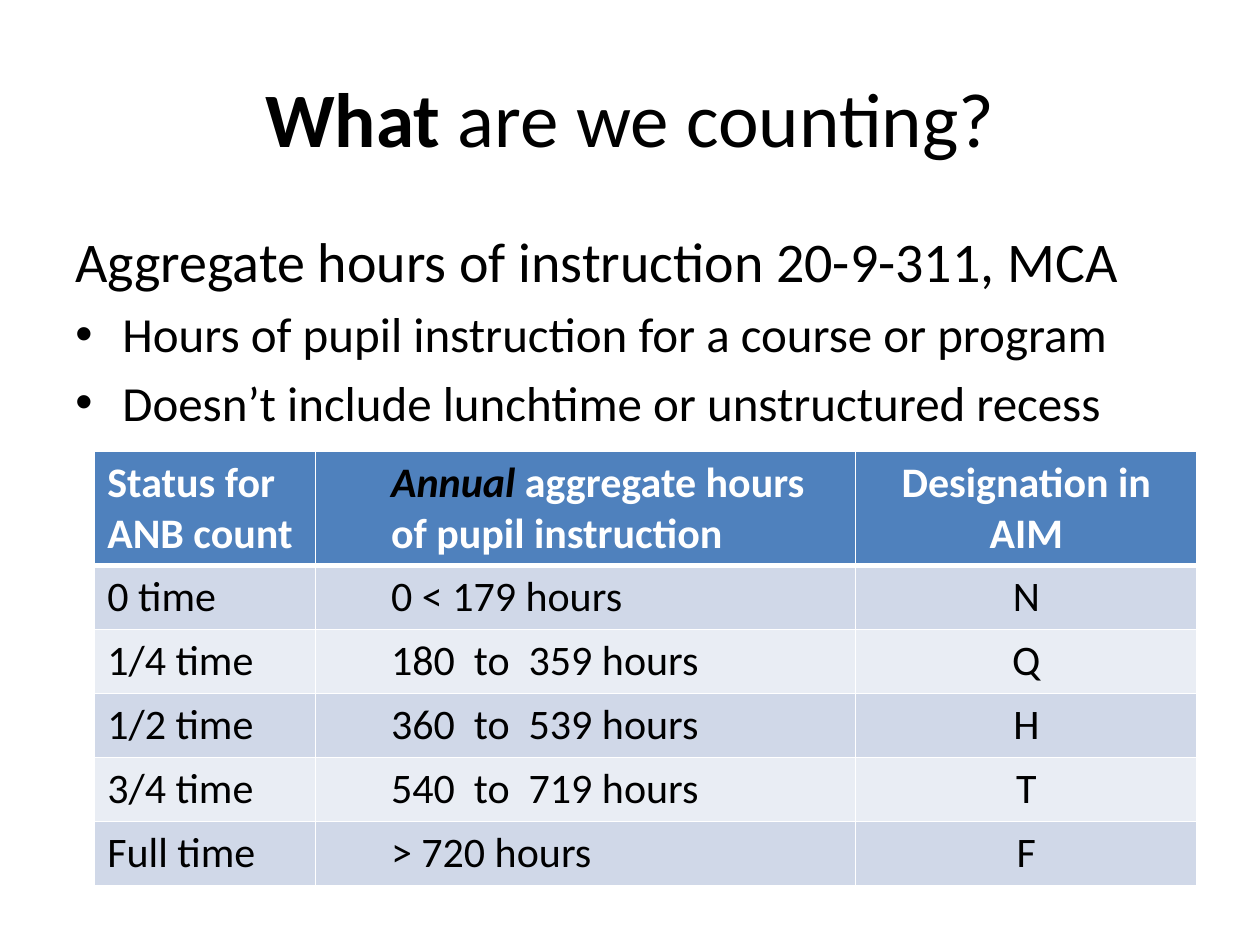
from lxml import etree
from pptx import Presentation
from pptx import util as u
from pptx.dml.color import RGBColor
from pptx.enum import text
from pptx.oxml.ns import qn

BLACK = RGBColor(0x00, 0x00, 0x00)
WHITE = RGBColor(0xFF, 0xFF, 0xFF)
HEADER = RGBColor(0x4F, 0x81, 0xBD)
BANDS = (RGBColor(0xD0, 0xD8, 0xE8), RGBColor(0xE9, 0xED, 0xF4))
FONT = "Calibri"

HEADINGS = ("Status for ANB count",
            "Annual aggregate hours of pupil instruction",
            "Designation in AIM")
STATUSES = (("0 time", "0 < 179 hours", "N"),
            ("1/4 time", "180  to  359 hours", "Q"),
            ("1/2 time", "360  to  539 hours", "H"),
            ("3/4 time", "540  to  719 hours", "T"),
            ("Full time", "> 720 hours", "F"))
COLUMN_WIDTHS = (4.45, 10.89, 6.88)
HEADER_HEIGHT = 2.3


def format_run(r, size, color=BLACK, bold=False, italic=False):
    f = r.font
    f.name, f.size, f.bold, f.italic = FONT, u.Pt(size), bold, italic
    f.color.rgb = color


def place(sp, left, top, width, height):
    sp.left, sp.top, sp.width, sp.height = map(u.Cm, (left, top, width, height))


def add_title(s, *box):
    sp = s.shapes.title
    place(sp, *box)
    tf = sp.text_frame
    tf.vertical_anchor = text.MSO_ANCHOR.MIDDLE
    p = tf.paragraphs[0]
    p.alignment = text.PP_ALIGN.CENTER
    for words, bold in (("What", True), (" are we counting?", False)):
        r = p.add_run()
        r.text = words
        format_run(r, 44, bold=bold)


def add_bullet(p, indent):
    pPr = p._p.get_or_add_pPr()
    pPr.set("marL", str(u.Cm(indent)))
    pPr.set("indent", str(-u.Cm(indent)))
    etree.SubElement(pPr, qn("a:buFont")).set("typeface", "Arial")
    etree.SubElement(pPr, qn("a:buChar")).set("char", "•")


def add_body(s, *box):
    tf = s.shapes.add_textbox(*map(u.Cm, box)).text_frame
    tf.word_wrap = True
    tf.text = ("Aggregate hours of instruction 20-9-311, MCA\n"
               "Hours of pupil instruction for a course or program\n"
               "Doesn’t include lunchtime or unstructured recess")
    for i, p in enumerate(tf.paragraphs):
        size = 28 if i else 32
        p.space_before = u.Pt(size * 0.2)
        format_run(p.runs[0], size)
        if i:
            add_bullet(p, 0.95)


def set_borders(cell, **widths):
    tcPr = cell._tc.get_or_add_tcPr()
    for side in "LRTB":
        ln = etree.SubElement(tcPr, qn("a:ln" + side))
        ln.set("w", str(u.Pt(widths.get(side, 1))))
        fill = etree.SubElement(ln, qn("a:solidFill"))
        etree.SubElement(fill, qn("a:srgbClr")).set("val", str(WHITE))


def fill_cell(cell, words, row, col):
    set_borders(cell, **{0: {"B": 3}, 1: {"T": 3}}.get(row, {}))
    cell.fill.solid()
    cell.fill.fore_color.rgb = BANDS[(row - 1) % 2] if row else HEADER
    cell.text_frame.text = words
    p = cell.text_frame.paragraphs[0]
    if col == 1:
        p._p.get_or_add_pPr().set("marL", str(u.Cm(1.27)))
    elif col == 2:
        p.alignment = text.PP_ALIGN.CENTER
    format_run(p.runs[0], 24, BLACK if row else WHITE, bold=row == 0)


def emphasize_first_word(p):
    r = p.runs[0]
    first, rest = r.text.split(" ", 1)
    r.text = first + " "
    format_run(r, 24, bold=True, italic=True)
    r = p.add_run()
    r.text = rest
    format_run(r, 24, WHITE, bold=True)


def add_status_table(s, left, top, width, height):
    rows = (HEADINGS,) + STATUSES
    table = s.shapes.add_table(len(rows), len(HEADINGS),
                               *map(u.Cm, (left, top, width, height))).table
    for column, share in zip(table.columns, COLUMN_WIDTHS):
        column.width = u.Cm(width * share / sum(COLUMN_WIDTHS))
    row_height = (height - HEADER_HEIGHT) / len(STATUSES)
    for i, row in enumerate(rows):
        table.rows[i].height = u.Cm(row_height if i else HEADER_HEIGHT)
        for j, words in enumerate(row):
            fill_cell(table.cell(i, j), words, i, j)
    emphasize_first_word(table.cell(0, 1).text_frame.paragraphs[0])


def main():
    prs = Presentation()
    prs.slide_width, prs.slide_height = u.Cm(25.4), u.Cm(19.05)
    s = prs.slides.add_slide(prs.slide_layouts[5])
    add_title(s, 1.27, 0.76, 22.86, 3.18)
    add_body(s, 1.27, 4.45, 22.86, 13.54)
    add_status_table(s, 1.91, 9.1, 22.22, 8.75)
    prs.save("out.pptx")


if __name__ == "__main__":
    main()
